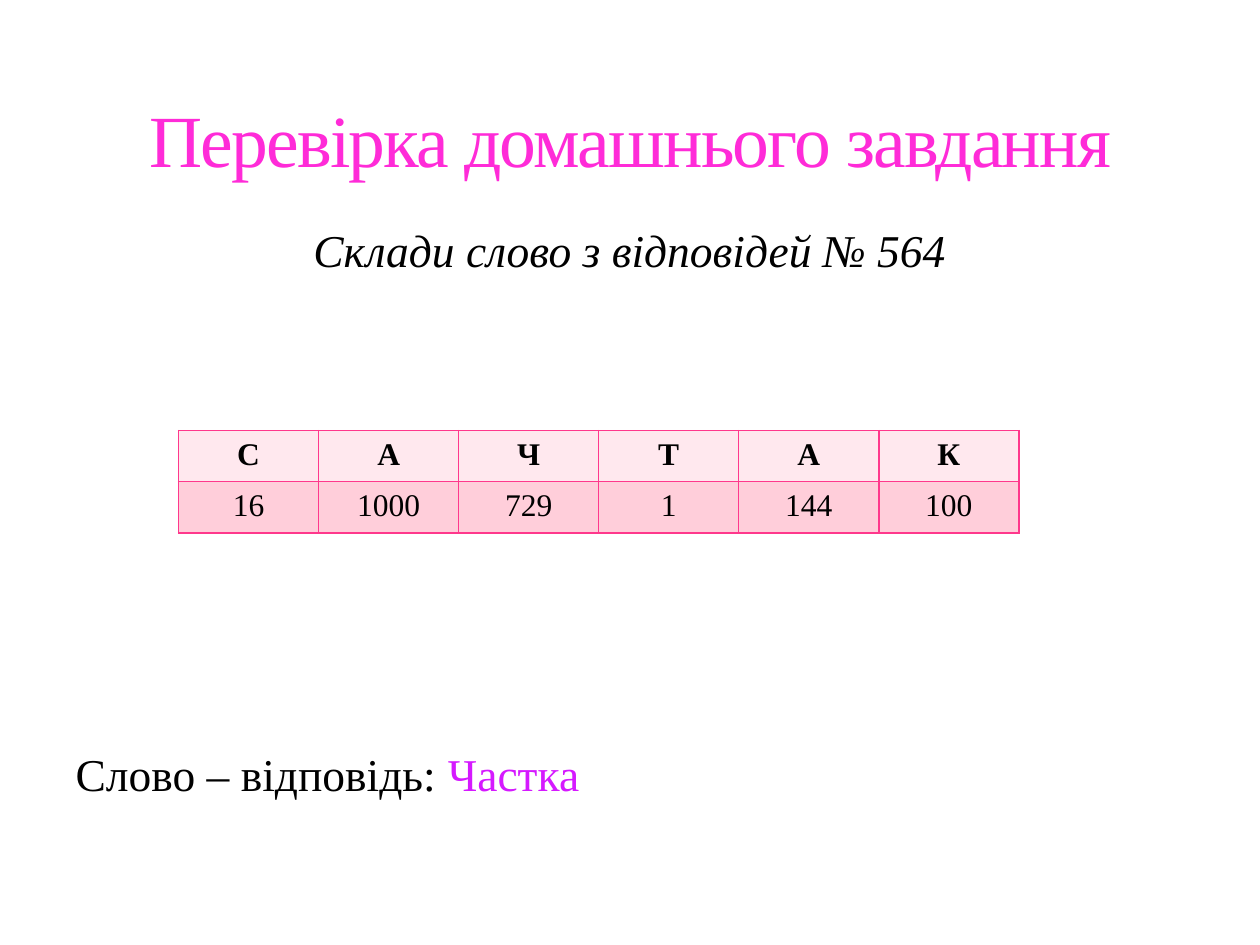
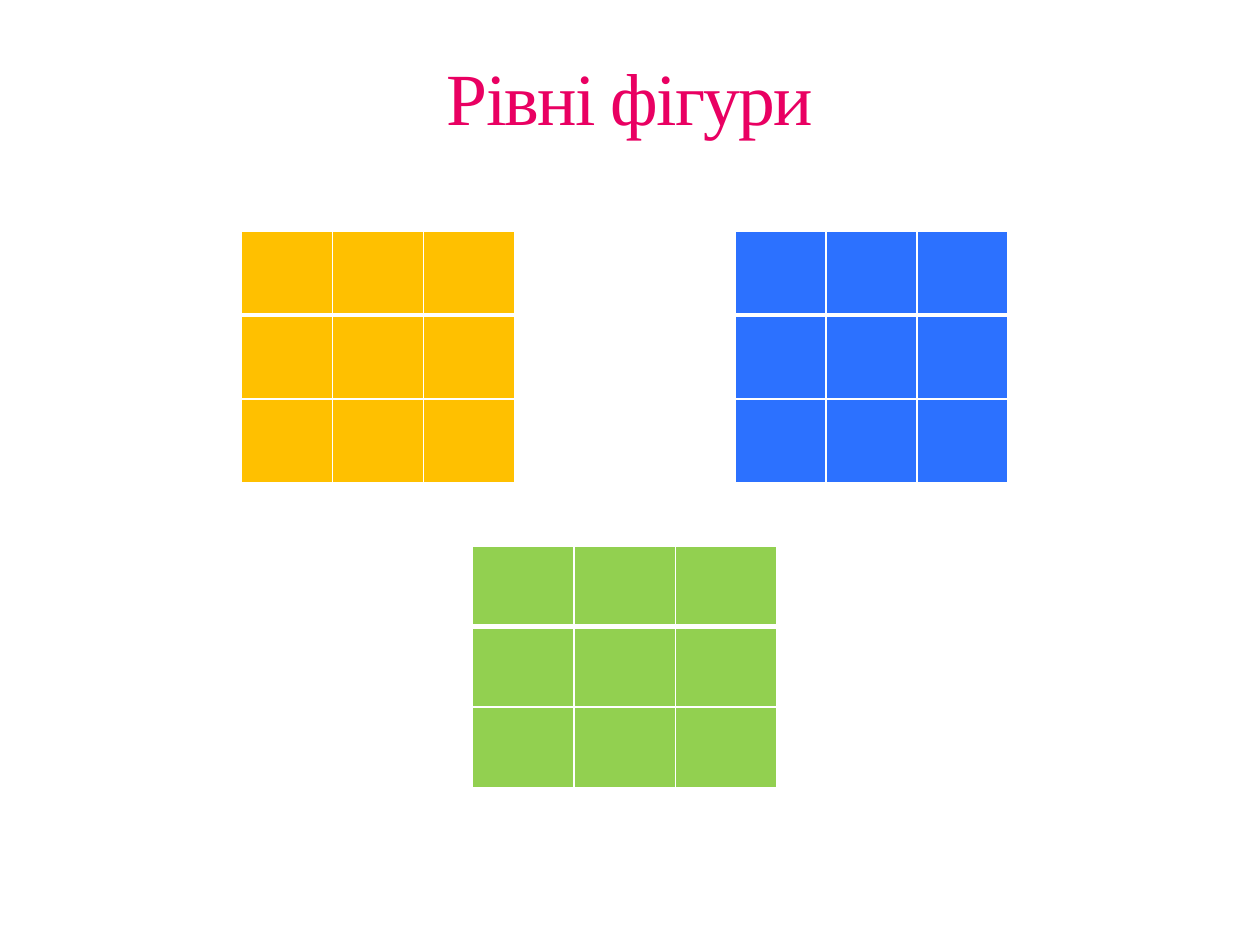
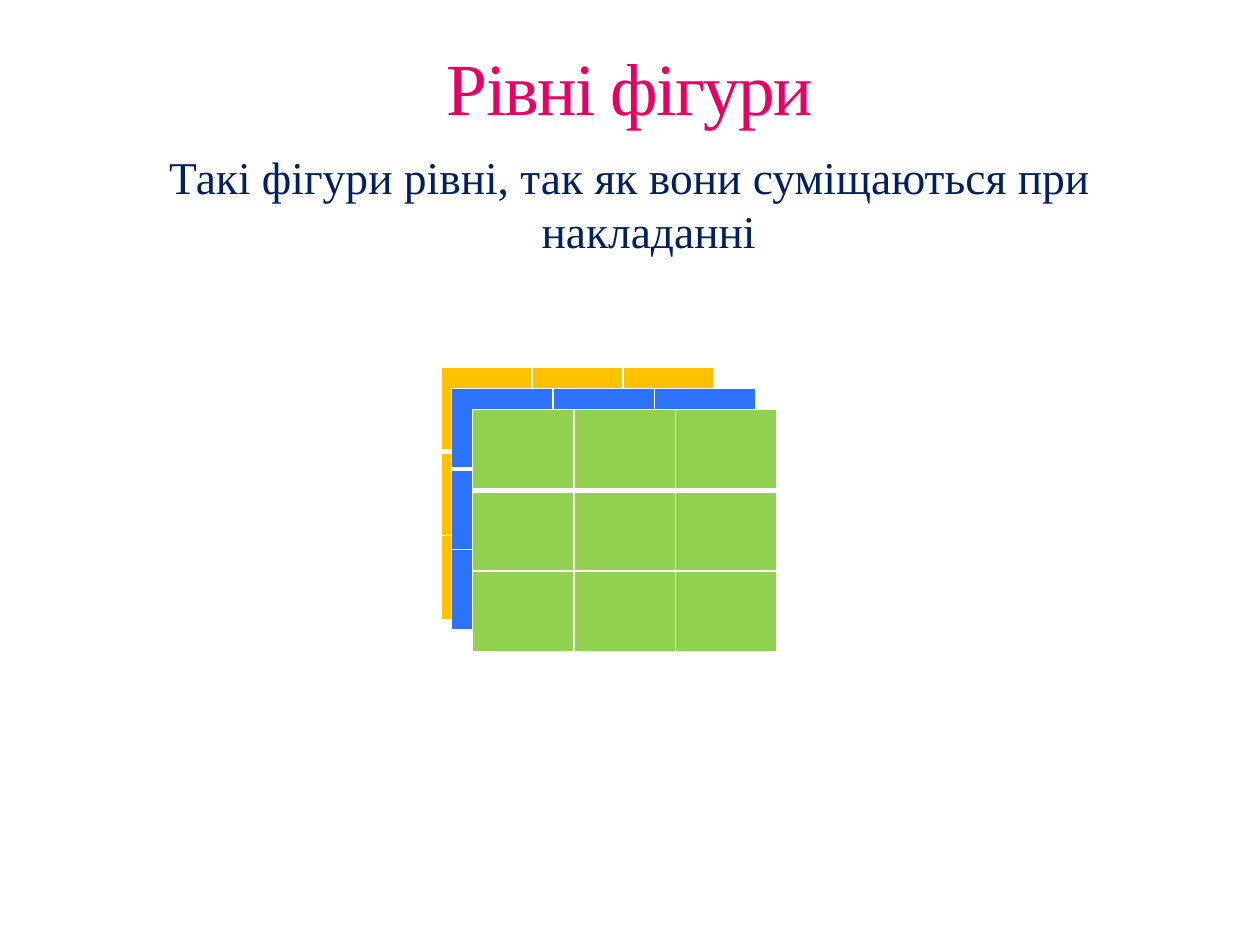
from lxml import etree
from pptx import Presentation
from pptx.dml.color import RGBColor
from pptx.enum.text import MSO_ANCHOR, MSO_AUTO_SIZE, PP_ALIGN
from pptx.oxml.ns import qn
from pptx.util import Cm, Pt

CENTER, LEFT = PP_ALIGN.CENTER, PP_ALIGN.LEFT
BOTTOM, TOP = MSO_ANCHOR.BOTTOM, MSO_ANCHOR.TOP
FIXED = MSO_AUTO_SIZE.NONE

FONT = "Times New Roman"
BLACK = RGBColor(0x00, 0x00, 0x00)
WHITE = RGBColor(0xFF, 0xFF, 0xFF)
NAVY = RGBColor(0x00, 0x20, 0x60)
PINK = RGBColor(0xFF, 0x2B, 0xD8)
ROSE = RGBColor(0xE9, 0x00, 0x62)
VIOLET = RGBColor(0xD5, 0x19, 0xFF)
EDGE = RGBColor(0xFF, 0x38, 0x8C)
PALE = RGBColor(0xFF, 0xE8, 0xEE)
BLUSH = RGBColor(0xFF, 0xCE, 0xDA)
GOLD = RGBColor(0xFF, 0xC0, 0x00)
BLUE = RGBColor(0x2C, 0x71, 0xFF)
GREEN = RGBColor(0x92, 0xD0, 0x50)

# Content: lengths in cm
MARGIN, WIDTH = 1.27, 22.86
TITLE_TOP = 0.42
SMALL, LARGE = (5.5, 5.08), (6.14, 4.87)

TASK = "Склади слово з відповідей № 564"
ANSWER = [("Слово – відповідь: ", BLACK), ("Частка", VIOLET)]
LETTERS = [
    ["С", "А", "Ч", "Т", "А", "К"],
    ["16", "1000", "729", "1", "144", "100"],
]
FIGURES = "Рівні фігури"
RULE = "Такі фігури рівні, так як вони суміщаються при накладанні"

# Squared figures: left, top, size, colour
APART = [
    (4.87, 4.66, SMALL, GOLD),
    (14.82, 4.66, SMALL, BLUE),
    (9.53, 11.01, LARGE, GREEN),
]
STACKED = [
    (8.89, 7.41, SMALL, GOLD),
    (9.1, 7.83, LARGE, BLUE),
    (9.53, 8.26, LARGE, GREEN),
]


def place(shape, top, height):
    shape.left, shape.top = Cm(MARGIN), Cm(top)
    shape.width, shape.height = Cm(WIDTH), Cm(height)
    shape.text_frame.auto_size = FIXED


def style(para, size, color=None, align=CENTER):
    para.alignment = align
    para.font.name, para.font.size = FONT, Pt(size)
    if color is not None:
        para.font.color.rgb = color


def add_slide(deck, layout, title, color, height):
    slide = deck.slides.add_slide(deck.slide_layouts[layout])
    head = slide.shapes.title
    place(head, TITLE_TOP, height)
    frame = head.text_frame
    frame.vertical_anchor = BOTTOM
    para = frame.paragraphs[0]
    run = para.add_run()
    run.text = title
    run.font._element.set("spc", "-100")
    style(para, 42, color)
    return slide


def add_body(slide, top, height):
    body = slide.placeholders[1]
    place(body, top, height)
    frame = body.text_frame
    frame.vertical_anchor = TOP
    frame.margin_top = Cm(0.25)
    return frame


def hang(para, before=0):
    """Hanging indent without a bullet."""
    props = para._p.get_or_add_pPr()
    props.set("marL", str(Cm(0.76)))
    props.set("indent", str(-Cm(0.76)))
    etree.SubElement(props, qn("a:buNone"))
    para.space_before = Pt(before)


def border(cell, color, top=1, bottom=1):
    props = cell._tc.get_or_add_tcPr()
    for side, width in (("L", 1), ("R", 1), ("T", top), ("B", bottom)):
        line = etree.SubElement(props, qn(f"a:ln{side}"), w=str(Pt(width)))
        fill = etree.SubElement(line, qn("a:solidFill"))
        etree.SubElement(fill, qn("a:srgbClr"), val=str(color))


def add_grid(slide, left, top, size, fills, edge, texts=None, cols=3, rule=1):
    """Even grid, one fill per row; rule is the line under the first row."""
    width, height = map(Cm, size)
    rows = len(fills)
    table = slide.shapes.add_table(
        rows, cols, Cm(left), Cm(top), width, height).table
    table.first_row = table.horz_banding = False
    for col in table.columns:
        col.width = width // cols
    for r, fill in enumerate(fills):
        table.rows[r].height = height // rows
        for c in range(cols):
            cell = table.cell(r, c)
            border(cell, edge, rule if r == 1 else 1, rule if r == 0 else 1)
            cell.fill.solid()
            cell.fill.fore_color.rgb = fill
            if texts:
                cell.text = texts[r][c]
                para = cell.text_frame.paragraphs[0]
                style(para, 18, BLACK)
                para.font.bold = r == 0


def add_figures(slide, figures):
    for left, top, size, color in figures:
        add_grid(slide, left, top, size, [color] * 3, WHITE, rule=3)


def main():
    deck = Presentation()
    deck.slide_width, deck.slide_height = Cm(25.4), Cm(19.05)

    # Homework check
    slide = add_slide(deck, 1, "Перевірка домашнього завдання", PINK, 3.39)
    frame = add_body(slide, 4.23, 12.7)
    task = frame.paragraphs[0]
    task.text = TASK
    hang(task)
    style(task, 26, BLACK)
    task.font.italic = True
    answer = frame.add_paragraph()
    for text, color in ANSWER:
        run = answer.add_run()
        run.text = text
        run.font.color.rgb = color
    hang(answer, 268)
    style(answer, 26, align=LEFT)
    add_grid(slide, 3.6, 8.68, (16.94, 2.06), [PALE, BLUSH], EDGE,
             LETTERS, cols=6)

    # Figures apart
    slide = add_slide(deck, 5, FIGURES, ROSE, 2.54)
    add_figures(slide, APART)

    # Figures laid over each other
    slide = add_slide(deck, 1, FIGURES, ROSE, 2.33)
    para = add_body(slide, 2.75, 14.18).paragraphs[0]
    para.text = RULE
    hang(para)
    style(para, 26, NAVY)
    add_figures(slide, STACKED)

    deck.save("out.pptx")


if __name__ == "__main__":
    main()
